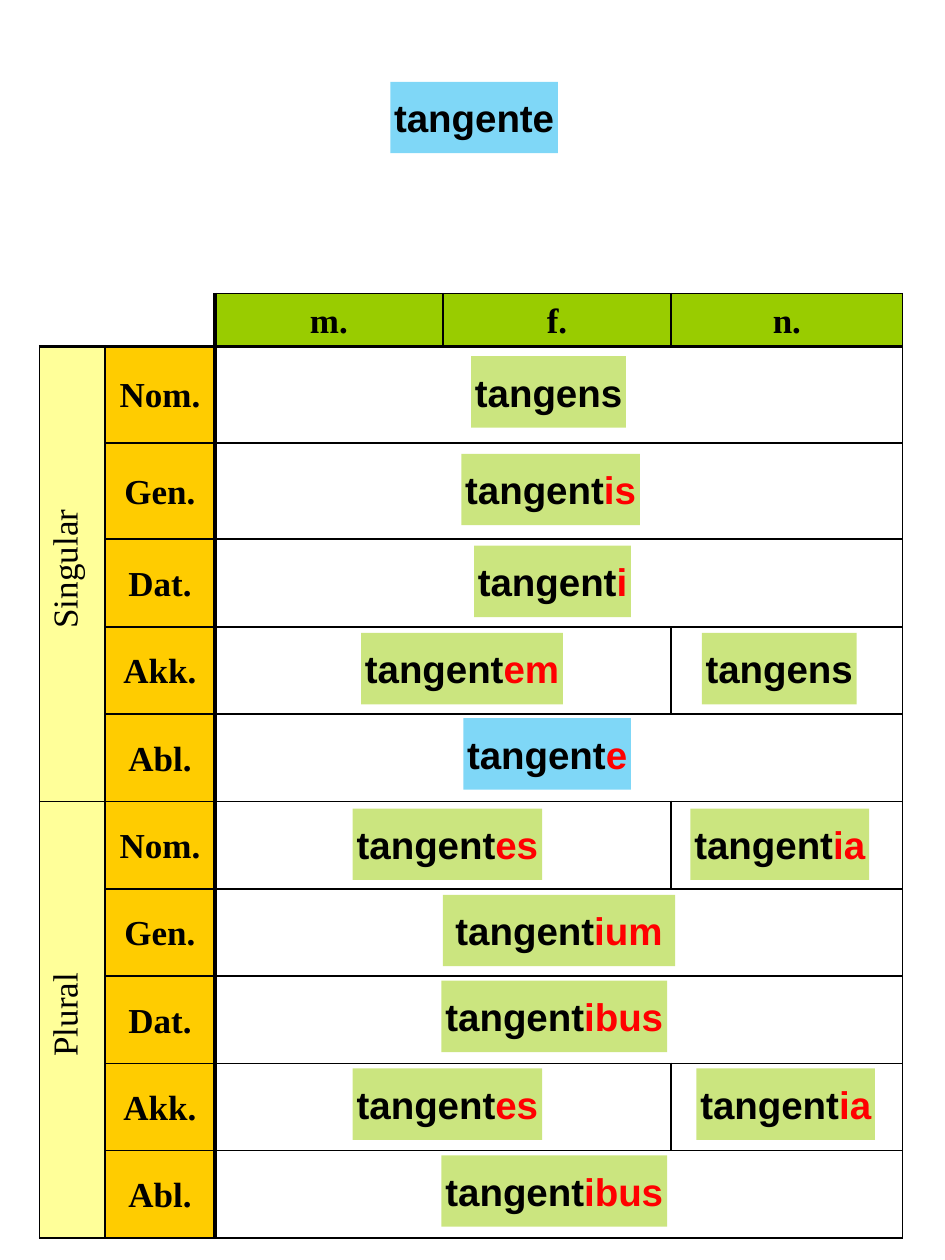
from pptx import Presentation
from pptx import util as u
from pptx.dml.color import RGBColor
from pptx.enum import shapes, text
from pptx.oxml import xmlchemy

BLACK = RGBColor(0x00, 0x00, 0x00)
RED = RGBColor(0xFF, 0x00, 0x00)
BLUE = RGBColor(0x00, 0xB0, 0xF0)
GREEN = RGBColor(0x99, 0xCC, 0x00)
ORANGE = RGBColor(0xFF, 0xCC, 0x00)
YELLOW = RGBColor(0xFF, 0xFF, 0x99)

THIN, THICK = u.Pt(1), u.Pt(2.25)
COLUMN_WIDTHS = [1.32, 2.21, 4.6, 4.6, 4.67]
ROW_HEIGHTS = [1.05, 1.94, 1.94, 1.77] + [1.76] * 7
GENDERS = ["m.", "f.", "n."]
CASES = ["Nom.", "Gen.", "Dat.", "Akk.", "Abl."]
NUMBERS = ["Singular", "Plural"]
SPLIT_ROWS = {4, 6, 9}
FORM_HEIGHT = 1.44

FORMS = [
    ("tangent", "e", BLUE, 9.34, 14.48, 3.38),
    ("tangent", "es", GREEN, 7.11, 16.3, 3.82),
    ("tangent", "is", GREEN, 9.3, 9.15, 3.6),
    ("tangent", "i", GREEN, 9.56, 11, 3.16),
    ("tangens", "", GREEN, 9.5, 7.18, 3.12),
    ("tangens", "", GREEN, 14.15, 12.76, 3.12),
    ("tangent", "es", GREEN, 7.11, 21.54, 3.82),
    ("tangent", "ium", GREEN, 8.93, 18.04, 4.68),
    ("tangent", "em", GREEN, 7.28, 12.76, 4.07),
    ("tangent", "ia", GREEN, 13.92, 16.3, 3.6),
    ("tangent", "ia", GREEN, 14.04, 21.54, 3.6),
    ("tangent", "ibus", GREEN, 8.9, 19.77, 4.55),
    ("tangent", "ibus", GREEN, 8.9, 23.29, 4.55),
]


def add_child(parent, tag, **attributes):
    child = xmlchemy.OxmlElement(tag)
    for key, value in attributes.items():
        child.set(key, str(value))
    parent.append(child)
    return child


def add_run(paragraph, words, font, size, color, bold=True):
    run = paragraph.add_run()
    run.text = words
    run.font.name = font
    run.font.size = u.Pt(size)
    run.font.bold = bold
    run.font.color.rgb = color


def add_form(slide, stem, ending, color, left, top, width):
    form = slide.shapes.add_shape(
        shapes.MSO_SHAPE.RECTANGLE,
        u.Cm(left), u.Cm(top), u.Cm(width), u.Cm(FORM_HEIGHT))
    form.shadow.inherit = False
    form.line.fill.background()
    form.fill.solid()
    form.fill.fore_color.rgb = color
    tint = form.fill._xPr.solidFill.srgbClr
    add_child(tint, "a:alpha", val=50000)
    frame = form.text_frame
    frame.word_wrap = ending == "ium"
    frame.auto_size = text.MSO_AUTO_SIZE.SHAPE_TO_FIT_TEXT
    frame.vertical_anchor = text.MSO_ANCHOR.TOP
    frame.margin_left = frame.margin_right = u.Cm(0.05)
    frame.margin_top = frame.margin_bottom = u.Cm(0.25)
    paragraph = frame.paragraphs[0]
    paragraph.alignment = text.PP_ALIGN.CENTER
    add_run(paragraph, stem, "Arial", 22, BLACK)
    if ending:
        add_run(paragraph, ending, "Arial", 22, RED)


def draw_borders(cell, widths):
    properties = cell._tc.get_or_add_tcPr()
    for tag in ("a:lnL", "a:lnR", "a:lnT", "a:lnB"):
        if tag in widths:
            border = add_child(properties, tag, w=widths[tag])
            add_child(add_child(border, "a:solidFill"), "a:srgbClr", val=BLACK)


def add_block(table, top, left, bottom, right, fill=None):
    origin = table.cell(top, left)
    if (top, left) != (bottom, right):
        origin.merge(table.cell(bottom, right))
    for row in range(top, bottom + 1):
        for column in range(left, right + 1):
            first = (row, column) == (top, left)
            widths = {}
            if (first or column == left) and (top, left) != (0, 0):
                widths["a:lnL"] = THICK if left == 2 else THIN
            if first or column == right:
                widths["a:lnR"] = THICK if right == 1 else THIN
            if (first or row == top) and (top, left) != (0, 0):
                widths["a:lnT"] = THICK if top == 1 else THIN
            if first or row == bottom:
                widths["a:lnB"] = THICK if bottom == 0 else THIN
            cell = table.cell(row, column)
            draw_borders(cell, widths)
            if fill is None:
                cell.fill.background()
            else:
                cell.fill.solid()
                cell.fill.fore_color.rgb = fill
    return origin


def write_label(cell, words, upright=True):
    cell.vertical_anchor = text.MSO_ANCHOR.MIDDLE
    cell.margin_left = cell.margin_right = u.Cm(0.15)
    cell.margin_top = cell.margin_bottom = u.Cm(0.08)
    paragraph = cell.text_frame.paragraphs[0]
    paragraph.alignment = text.PP_ALIGN.CENTER
    paragraph.line_spacing = 1.07
    if not upright:
        cell._tc.get_or_add_tcPr().set("vert", "vert270")
        paragraph._p.get_or_add_pPr().set("marL", str(u.Cm(0.2)))
    add_run(paragraph, words, "Times New Roman", 20, BLACK, bold=upright)


def add_declension(slide):
    table = slide.shapes.add_table(
        len(ROW_HEIGHTS), len(COLUMN_WIDTHS), u.Cm(0.8), u.Cm(5.92),
        u.Cm(sum(COLUMN_WIDTHS)), u.Cm(sum(ROW_HEIGHTS))).table
    table.first_row = table.horz_banding = False
    for column, width in zip(table.columns, COLUMN_WIDTHS):
        column.width = u.Cm(width)
    for row, height in zip(table.rows, ROW_HEIGHTS):
        row.height = u.Cm(height)

    add_block(table, 0, 0, 0, 1)
    for column, gender in enumerate(GENDERS, start=2):
        write_label(add_block(table, 0, column, 0, column, GREEN), gender)
    for index, number in enumerate(NUMBERS):
        start = 1 + index * len(CASES)
        end = start + len(CASES) - 1
        write_label(add_block(table, start, 0, end, 0, YELLOW), number, upright=False)
        for row, case in enumerate(CASES, start=start):
            write_label(add_block(table, row, 1, row, 1, ORANGE), case)
            if row in SPLIT_ROWS:
                add_block(table, row, 2, row, 3)
                add_block(table, row, 4, row, 4)
            else:
                add_block(table, row, 2, row, 4)


def main():
    deck = Presentation()
    deck.slide_width, deck.slide_height = u.Cm(19.05), u.Cm(25.4)
    slide = deck.slides.add_slide(deck.slide_layouts[6])
    add_form(slide, "tangente", "", BLUE, 7.87, 1.65, 3.38)
    add_declension(slide)
    for form in FORMS:
        add_form(slide, *form)
    deck.save("out.pptx")


if __name__ == "__main__":
    main()
